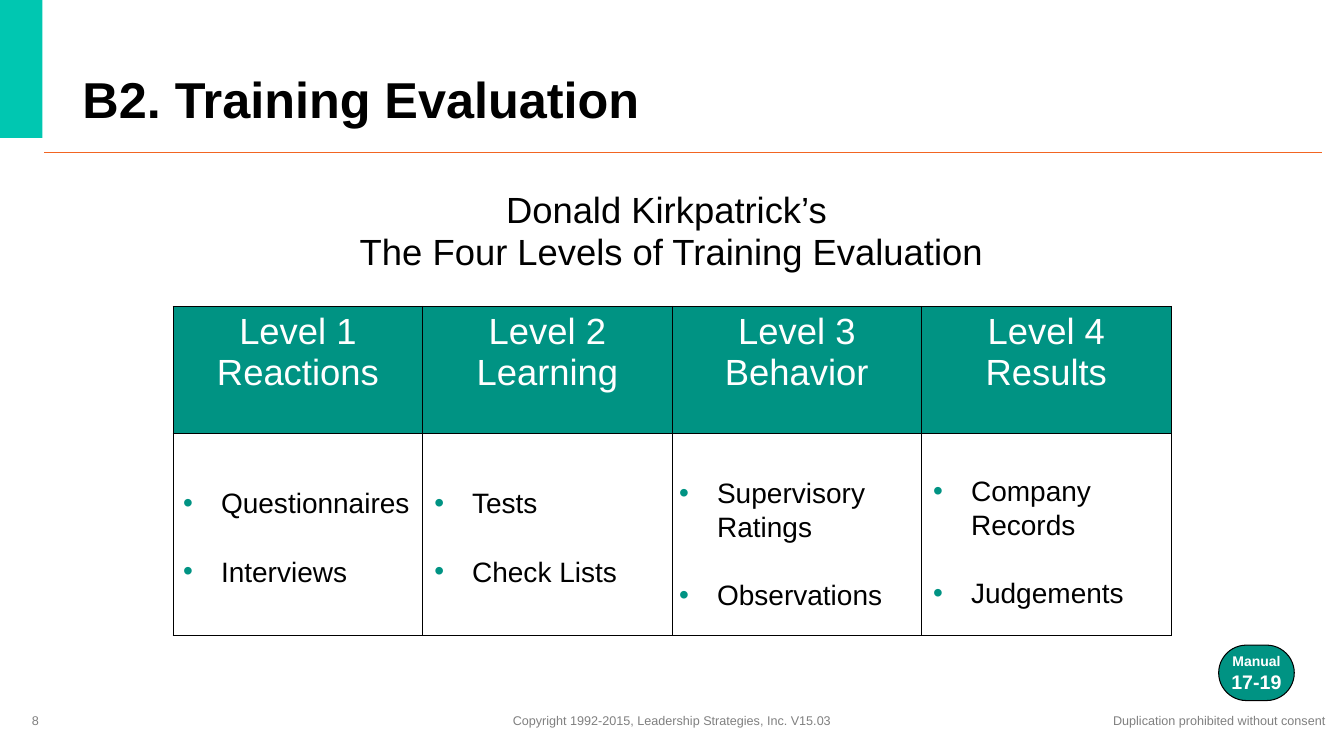
from lxml.etree import SubElement
from pptx import Presentation
from pptx.dml.color import RGBColor
from pptx.enum.shapes import MSO_CONNECTOR, MSO_SHAPE
from pptx.enum.text import MSO_ANCHOR, PP_ALIGN
from pptx.oxml.ns import qn
from pptx.util import Pt

HUES = {"mint": "00C7B1", "teal": "009383", "rule": "F26522",
        "black": "000000", "white": "FFFFFF", "gray": "808080"}
MID = PP_ALIGN.CENTER


def tint(name):
    return RGBColor.from_string(HUES[name])


class Deck:
    """Holds the font and the current slide; all lengths are points."""

    def __init__(self, wide, high, face):
        self.show = Presentation()
        self.show.slide_width, self.show.slide_height = Pt(wide), Pt(high)
        self.slide = self.show.slides.add_slide(self.show.slide_layouts[6])
        self.face = face

    def words(self, para, text, size, hue="black", bold=False, **form):
        """Add a run; form holds paragraph values."""
        for key, val in form.items():
            setattr(para, key, val)
        run = para.add_run()
        run.text = text
        look = {"name": self.face, "size": Pt(size), "bold": bold}
        for key, val in look.items():
            setattr(run.font, key, val)
        run.font.color.rgb = tint(hue)

    def text(self, box, lines, size, wrap=True, anchor=MSO_ANCHOR.TOP, **form):
        frame = self.slide.shapes.add_textbox(*map(Pt, box)).text_frame
        frame.word_wrap, frame.vertical_anchor = wrap, anchor
        para = frame.paragraphs[0]
        for i, line in enumerate(lines):
            if i:
                para.add_line_break()
            self.words(para, line, size, **form)

    def shape(self, kind, box, fill, edge=None):
        item = self.slide.shapes.add_shape(kind, *map(Pt, box))
        item.shadow.inherit = False
        item.fill.solid()
        item.fill.fore_color.rgb = tint(fill)
        if edge:
            item.line.color.rgb = tint(edge)
            item.line.width = Pt(0.75)
        else:
            item.line.fill.background()
        return item

    def line(self, ends, hue, width):
        item = self.slide.shapes.add_connector(
            MSO_CONNECTOR.STRAIGHT, *map(Pt, ends))
        item.line.color.rgb = tint(hue)
        item.line.width = Pt(width)
        SubElement(item._element.spPr, qn("a:effectLst"))

    def list(self, box, items, size, gap):
        frame = self.slide.shapes.add_textbox(*map(Pt, box)).text_frame
        frame.word_wrap = True
        for i, item in enumerate(items):
            para = frame.add_paragraph() if i else frame.paragraphs[0]
            prop = para._p.get_or_add_pPr()
            prop.set("marL", str(Pt(27)))
            prop.set("indent", str(-Pt(27)))
            tone = SubElement(prop, qn("a:buClr"))
            SubElement(tone, qn("a:srgbClr"), val=HUES["teal"])
            SubElement(prop, qn("a:buFont"), typeface=self.face)
            SubElement(prop, qn("a:buChar"), char="•")
            self.words(para, item, size, space_before=Pt(gap if i else 0))

    def frame(self, cell):
        prop = cell._tc.get_or_add_tcPr()
        for side in ("lnL", "lnR", "lnT", "lnB"):
            edge = SubElement(prop, qn("a:" + side), w=str(Pt(1)))
            fill = SubElement(edge, qn("a:solidFill"))
            SubElement(fill, qn("a:srgbClr"), val=HUES["black"])

    def table(self, box, heads, rows):
        grid = self.slide.shapes.add_table(
            len(rows), len(heads), *map(Pt, box)).table
        grid.horz_banding = False
        for row, high in zip(grid.rows, rows):
            row.height = Pt(high)
        for cell in grid.iter_cells():
            self.frame(cell)
            cell.fill.background()
        for i, head in enumerate(heads):
            cell = grid.cell(0, i)
            cell.fill.solid()
            cell.fill.fore_color.rgb = tint("teal")
            for j, word in enumerate(head):
                frame = cell.text_frame
                para = frame.add_paragraph() if j else frame.paragraphs[0]
                self.words(para, word, 26, "white", alignment=MID)


def main():
    deck = Deck(960, 540, "Arial")

    # Corner block, title and rule
    deck.shape(MSO_SHAPE.RECTANGLE, (-1.4, -1.4, 31.7, 100), "mint")
    deck.line((31.7, 108.9, 944.6, 108.9), "rule", 0.5)
    deck.text((51.8, 41, 584.6, 54.7), ["B2. Training Evaluation"], 36,
              anchor=MSO_ANCHOR.BOTTOM, bold=True, line_spacing=0.9)

    # Heading over the table
    deck.text((155.5, 132.5, 648.7, 87.8),
              ["Donald Kirkpatrick’s ",
               "The Four Levels of Training Evaluation"],
              26, alignment=MID, line_spacing=0.95)

    # Four levels, with the measures for each
    heads = [("Level 1", "Reactions"), ("Level 2", "Learning"),
             ("Level 3", "Behavior"), ("Level 4", "Results")]
    deck.table((123.8, 218.9, 712.8, 235), heads, (91, 144))
    lists = [(123.8, 343.4, ("Questionnaires", "Interviews")),
             (303.1, 343.4, ("Tests", "Check Lists")),
             (478.1, 336.2, ("Supervisory Ratings", "Observations")),
             (659.5, 334.8, ("Company Records", "Judgements"))]
    for left, top, items in lists:
        deck.list((left, top, 179.3, 80), items, 20, 25)

    # Manual page badge
    badge = deck.shape(MSO_SHAPE.ROUNDED_RECTANGLE,
                       (870.5, 460.8, 54, 39.6), "teal", "black")
    badge.adjustments[0] = 0.5
    frame = badge.text_frame
    frame.word_wrap, frame.vertical_anchor = False, MSO_ANCHOR.MIDDLE
    para = frame.paragraphs[0]
    deck.words(para, "Manual", 10, "white", True, alignment=MID)
    para.add_line_break()
    deck.words(para, "17-19", 14, "white", True)

    # Footer
    deck.text((15.8, 500.4, 216, 28.8), ["8"], 9,
              anchor=MSO_ANCHOR.MIDDLE, hue="gray")
    notes = [(357.8, 244.1,
              "Copyright 1992-2015, Leadership Strategies, Inc. V15.03"),
             (787, 167.8, "Duplication prohibited without consent")]
    for left, wide, note in notes:
        deck.text((left, 505.4, wide, 18), [note], 9, wrap=False,
                  hue="gray", alignment=MID)

    deck.show.save("out.pptx")


if __name__ == "__main__":
    main()
